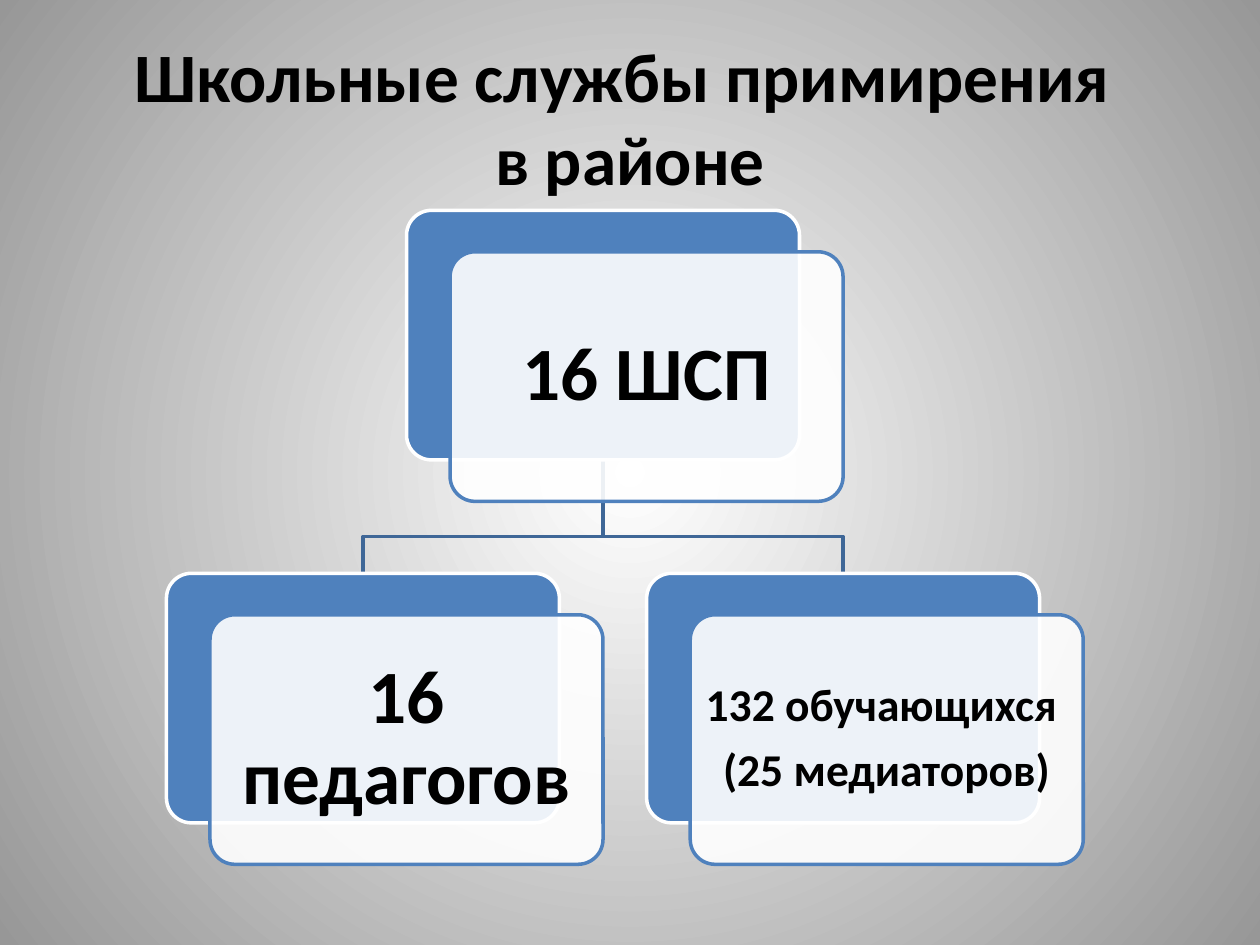
"""Builds a slide with a small hierarchy of school mediation services."""
import pptx
import pptx.dml.color
import pptx.enum.shapes
import pptx.enum.text
import pptx.oxml
import pptx.oxml.ns
import pptx.util

Pt = pptx.util.Pt
qn = pptx.oxml.ns.qn
NS = pptx.oxml.ns.nsdecls("a")


class Deck:
    """Holds the style and the current slide."""

    colors = {"black": "000000", "white": "FFFFFF", "gray": "979797",
              "blue": "4F81BD", "link": "3F6797"}
    font = "Calibri"
    card_w, card_h = 224.6, 142.6
    shift_x, shift_y = 24.9, 23.7

    def __init__(self, prs):
        self.s = prs.slides.add_slide(prs.slide_layouts[5])

    def rgb(self, name):
        return pptx.dml.color.RGBColor.from_string(self.colors[name])

    def background(self, center, edge):
        fill = self.s.background.fill
        fill.gradient()
        for stop, color in zip(fill.gradient_stops, (center, edge)):
            stop.color.rgb = self.rgb(color)
        grad = self.s.element.find(".//" + qn("a:gradFill"))
        grad.replace(grad.find(qn("a:lin")), pptx.oxml.parse_xml(
            f'<a:path {NS} path="circle"><a:fillToRect l="100000" t="100000"'
            ' r="100000" b="100000"/></a:path>'))

    def run(self, p, text, size):
        r = p.add_run()
        r.text = text
        r.font.name, r.font.size, r.font.bold = self.font, Pt(size), True
        r.font.color.rgb = self.rgb("black")

    def title(self, lines, size):
        sp = self.s.shapes.title
        sp.left, sp.top, sp.width, sp.height = Pt(36), Pt(21.6), Pt(648), Pt(90)
        tf = sp.text_frame
        tf.vertical_anchor = pptx.enum.text.MSO_ANCHOR.MIDDLE
        p = tf.paragraphs[0]
        p.alignment = pptx.enum.text.PP_ALIGN.CENTER
        for i, line in enumerate(lines):
            if i:
                p.add_line_break()
            self.run(p, line, size)

    def link(self, x1, y1, x2, y2, mid):
        builder = self.s.shapes.build_freeform(Pt(x1), Pt(y1))
        builder.add_line_segments(
            [(Pt(x), Pt(y)) for x, y in ((x1, mid), (x2, mid), (x2, y2))],
            close=False)
        sp = builder.convert_to_shape()
        sp.shadow.inherit = False
        sp.fill.background()
        sp.line.color.rgb = self.rgb("link")
        sp.line.width = Pt(2)

    def box(self, x, y, fill, line):
        sp = self.s.shapes.add_shape(
            pptx.enum.shapes.MSO_SHAPE.ROUNDED_RECTANGLE,
            Pt(x), Pt(y), Pt(self.card_w), Pt(self.card_h))
        sp.adjustments[0] = 0.1
        sp.shadow.inherit = False
        sp.fill.solid()
        sp.fill.fore_color.rgb = self.rgb(fill)
        sp.line.color.rgb = self.rgb(line)
        sp.line.width = Pt(2)
        return sp

    def card(self, x, y, lines, size, inset):
        self.box(x, y, "blue", "white")
        sp = self.box(x + self.shift_x, y + self.shift_y, "white", "blue")
        color = sp.element.spPr.find(qn("a:solidFill"))[0]
        color.append(pptx.oxml.parse_xml(f'<a:alpha {NS} val="90000"/>'))
        tf = sp.text_frame
        tf.word_wrap = True
        tf.vertical_anchor = pptx.enum.text.MSO_ANCHOR.MIDDLE
        tf.margin_left = tf.margin_right = Pt(inset)
        tf.margin_top = tf.margin_bottom = Pt(inset)
        for i, line in enumerate(lines):
            p = tf.add_paragraph() if i else tf.paragraphs[0]
            p.alignment = pptx.enum.text.PP_ALIGN.CENTER
            p.line_spacing = 0.9
            p.space_after = Pt(0)
            after = p._p.pPr.find(qn("a:spcAft"))
            after.replace(after[0], pptx.oxml.parse_xml(
                f'<a:spcPct {NS} val="35000"/>'))
            self.run(p, line, size)


def main():
    prs = pptx.Presentation()
    prs.slide_width, prs.slide_height = Pt(720), Pt(540)
    deck = Deck(prs)
    deck.background("white", "gray")
    deck.title(["Школьные службы примирения ", "в районе"], 39.6)

    root_x, root_y, child_y, step = 232.3, 120.2, 327.6, 137.2
    center, bottom = root_x + deck.card_w / 2, root_y + deck.card_h
    for side in (1, -1):
        deck.link(center, bottom, center + side * step, child_y, 306.7)
    deck.card(root_x, root_y, ["16 ШСП"], 43, 8.8)
    deck.card(root_x - step, child_y, ["16 педагогов"], 43, 8.8)
    deck.card(root_x + step, child_y,
              ["132 обучающихся ", "(25 медиаторов)"], 26, 3.7)
    prs.save("out.pptx")


if __name__ == "__main__":
    main()
